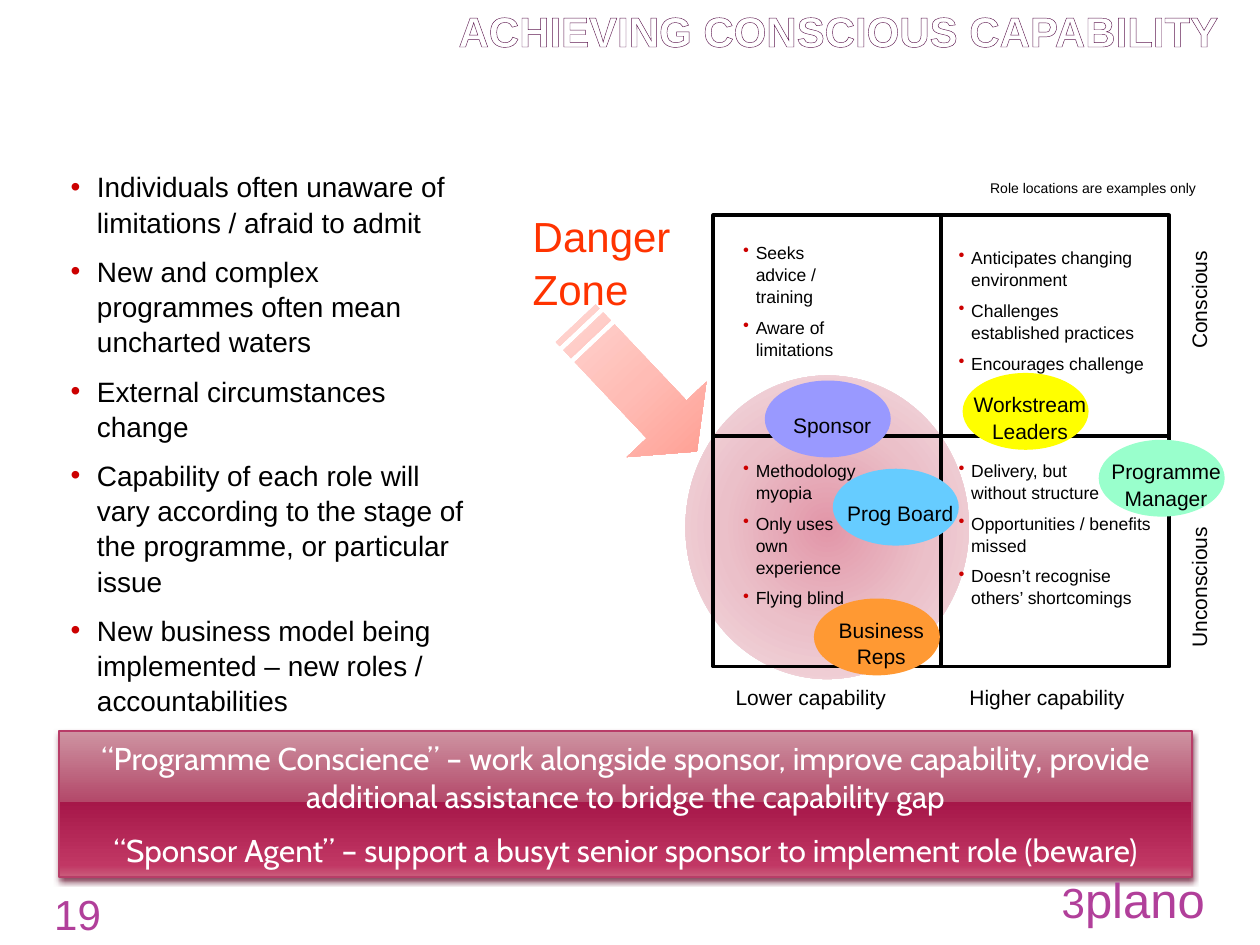
import pptx
import pptx.util
import pptx.dml.color
import pptx.enum.shapes
import pptx.enum.text
import pptx.oxml
import pptx.oxml.ns
from lxml import etree

Inches = pptx.util.Inches
Pt = pptx.util.Pt
RGBColor = pptx.dml.color.RGBColor
MSO_SHAPE = pptx.enum.shapes.MSO_SHAPE
PP_ALIGN = pptx.enum.text.PP_ALIGN
MSO_ANCHOR = pptx.enum.text.MSO_ANCHOR
qn = pptx.oxml.ns.qn
NS = pptx.oxml.ns.nsdecls("a")

BLACK = RGBColor(0x00, 0x00, 0x00)
WHITE = RGBColor(0xFF, 0xFF, 0xFF)
BULLET_RED = RGBColor(0xCC, 0x00, 0x00)
DANGER_RED = RGBColor(0xFF, 0x33, 0x00)
FOOTER_PINK = RGBColor(0xB1, 0x3F, 0x9A)
BANNER_LINE = RGBColor(0xB8, 0x3D, 0x68)
BANNER_SHADOW = RGBColor(0x72, 0x26, 0x40)
TITLE_OUTLINE = RGBColor(0x5E, 0x1A, 0x50)
LILAC = RGBColor(0x99, 0x99, 0xFF)
MINT = RGBColor(0x99, 0xFF, 0xCC)
YELLOW = RGBColor(0xFF, 0xFF, 0x00)
SKY = RGBColor(0x66, 0xCC, 0xFF)
ORANGE = RGBColor(0xFF, 0x99, 0x33)
ZONE_STOPS = [(0, RGBColor(0xE2, 0x96, 0xA8)), (50, RGBColor(0xEB, 0xC0, 0xC9)),
              (100, RGBColor(0xF5, 0xE0, 0xE5))]
BANNER_STOPS = [(0, RGBColor(0xCE, 0x94, 0xA2)), (49, RGBColor(0xB3, 0x48, 0x69)),
                (49, RGBColor(0xA6, 0x17, 0x49)), (92, RGBColor(0xC1, 0x37, 0x64)),
                (100, RGBColor(0xCA, 0x5D, 0x7C))]
ARROW_STOPS = [(0, RGBColor(0xFF, 0xDE, 0xDB)), (50, RGBColor(0xFF, 0xBC, 0xB5)),
               (100, RGBColor(0xFF, 0x92, 0x84))]
RADIAL = '<a:path path="circle"><a:fillToRect l="50000" t="50000" r="50000" b="50000"/></a:path>'


def add_run(p, text, size=12, color=BLACK, font="Arial", bold=False):
    r = p.add_run()
    r.text = text
    r.font.name, r.font.size, r.font.bold = font, Pt(size), bold
    r.font.color.rgb = color
    return r


def linear(angle):
    return f'<a:lin ang="{angle * 60000}" scaled="0"/>'


def set_gradient(sp, stops, direction):
    sp.fill.background()
    gs = "".join(f'<a:gs pos="{pos * 1000}"><a:srgbClr val="{c}"/></a:gs>' for pos, c in stops)
    grad = pptx.oxml.parse_xml(
        f'<a:gradFill {NS} rotWithShape="1"><a:gsLst>{gs}</a:gsLst>{direction}</a:gradFill>')
    no_fill = sp.element.spPr.find(qn("a:noFill"))
    sp.element.spPr.replace(no_fill, grad)


def set_bullet(p, indent):
    pPr = p._p.get_or_add_pPr()
    pPr.set("marL", str(Inches(indent)))
    pPr.set("indent", str(-Inches(indent)))
    color = etree.SubElement(pPr, qn("a:buClr"))
    etree.SubElement(color, qn("a:srgbClr"), val=str(BULLET_RED))
    etree.SubElement(pPr, qn("a:buChar"), char="•")


class SlideBuilder:
    line_spacing = 1.05
    grid_width = 2.25

    def __init__(self, slide):
        self.s = slide

    def place(self, sp, x, y, w, h):
        sp.left, sp.top, sp.width, sp.height = Inches(x), Inches(y), Inches(w), Inches(h)

    def set_text(self, tf, paragraphs, size=12, align=PP_ALIGN.LEFT, anchor=MSO_ANCHOR.MIDDLE,
                 bullet=None, wrap=True, spacing=line_spacing, **style):
        tf.auto_size = pptx.enum.text.MSO_AUTO_SIZE.NONE
        tf.word_wrap = wrap
        tf.vertical_anchor = anchor
        for i, text in enumerate(paragraphs):
            p = tf.add_paragraph() if i else tf.paragraphs[0]
            if bullet:
                set_bullet(p, bullet)
            p.alignment = align
            p.line_spacing = spacing
            p.space_before = Pt(size / 2 if i else 0)
            for j, line in enumerate(text.split("\n")):
                if j:
                    p.add_line_break()
                add_run(p, line, size, **style)

    def title(self, text, *box):
        sp = self.s.shapes.title
        self.place(sp, *box)
        tf = sp.text_frame
        tf.margin_left = tf.margin_right = Inches(0.05)
        tf.margin_top = tf.margin_bottom = 0
        self.set_text(tf, [text], 24, PP_ALIGN.RIGHT, MSO_ANCHOR.BOTTOM, spacing=1.0,
                      color=WHITE, bold=True)
        outline = pptx.oxml.parse_xml(
            f'<a:ln {NS} w="508"><a:solidFill><a:srgbClr val="{TITLE_OUTLINE}"/></a:solidFill></a:ln>')
        tf.paragraphs[0].runs[0].font._element.insert(0, outline)

    def body(self, items, *box):
        sp = self.s.placeholders[1]
        self.place(sp, *box)
        self.set_text(sp.text_frame, items, 16, bullet=0.21)

    def text(self, paragraphs, x, y, w, h, rotation=0, parent=None, **style):
        shapes = (parent or self.s).shapes
        sp = shapes.add_textbox(Inches(x), Inches(y), Inches(w), Inches(h))
        sp.rotation = rotation
        self.set_text(sp.text_frame, paragraphs, **style)
        return sp

    def footer(self, text, *box):
        sp = self.text([text], *box, size=24, align=PP_ALIGN.RIGHT, anchor=MSO_ANCHOR.BOTTOM,
                       color=FOOTER_PINK, spacing=1.0)
        sp.text_frame.margin_top = sp.text_frame.margin_bottom = 0
        return sp

    def shape(self, kind, x, y, w, h, fill=None, parent=None):
        shapes = (parent or self.s).shapes
        sp = shapes.add_shape(kind, Inches(x), Inches(y), Inches(w), Inches(h))
        sp.shadow.inherit = False
        sp.line.fill.background()
        if fill is None:
            sp.fill.background()
        else:
            sp.fill.solid()
            sp.fill.fore_color.rgb = fill
        return sp

    def line(self, x1, y1, x2, y2):
        cn = self.s.shapes.add_connector(pptx.enum.shapes.MSO_CONNECTOR.STRAIGHT,
                                         Inches(x1), Inches(y1), Inches(x2), Inches(y2))
        cn.line.color.rgb = BLACK
        cn.line.width = Pt(self.grid_width)
        etree.SubElement(cn._element.spPr, qn("a:effectLst"))
        return cn

    def grid(self, x, y, w, h, split):
        frame = self.shape(MSO_SHAPE.RECTANGLE, x, y, w, h)
        frame.line.color.rgb = BLACK
        frame.line.width = Pt(self.grid_width)
        divider = self.line(x + w / 2, y, x + w / 2, y + h)
        divider.begin_connect(frame, 0)
        divider.end_connect(frame, 2)
        self.line(x, split, x + w, split)

    def role(self, name, x, y, color, h):
        group = self.s.shapes.add_group_shape()
        self.shape(MSO_SHAPE.OVAL, x, y, 1, 0.61, color, group)
        self.text([name], x - 0.08, y + 0.35 - h / 2, 1.23, h, parent=group, align=PP_ALIGN.CENTER)

    def striped_arrow(self, x, y, w, h, rotation):
        near, far, neck = h / 4, h * 3 / 4, w * 3 / 4
        bars = [[(a * w, near), (b * w, near), (b * w, far), (a * w, far)]
                for a, b in ((0, 1 / 32), (1 / 16, 1 / 8))]
        head = [(w * 5 / 32, near), (neck, near), (neck, 0), (w, h / 2),
                (neck, h), (neck, far), (w * 5 / 32, far)]
        fb = self.s.shapes.build_freeform(0, 0, scale=Inches(1) / 1000)
        for outline in bars + [head]:
            points = [(round(px * 1000), round(py * 1000)) for px, py in outline]
            fb.move_to(*points[0])
            fb.add_line_segments(points[1:], close=True)
        sp = fb.convert_to_shape()
        self.place(sp, x, y, w, h)
        sp.rotation = rotation
        sp.shadow.inherit = False
        sp.line.fill.background()
        set_gradient(sp, ARROW_STOPS, linear(0))

    def banner(self, paragraphs, *box):
        sp = self.shape(MSO_SHAPE.RECTANGLE, *box)
        set_gradient(sp, BANNER_STOPS, linear(90))
        sp.line.color.rgb = BANNER_LINE
        sp.line.width = Pt(0.9)
        sp.element.spPr.find(qn("a:effectLst")).append(pptx.oxml.parse_xml(
            f'<a:outerShdw {NS} blurRad="{Pt(3.1)}" dist="{Pt(2)}" dir="5400000" rotWithShape="0">'
            f'<a:srgbClr val="{BANNER_SHADOW}"><a:alpha val="83000"/></a:srgbClr></a:outerShdw>'))
        self.set_text(sp.text_frame, paragraphs, 18, PP_ALIGN.CENTER, spacing=1.0,
                      color=WHITE, font="Cabin")


def main():
    prs = pptx.Presentation()
    prs.slide_width, prs.slide_height = Inches(10), Inches(7.5)
    b = SlideBuilder(prs.slides.add_slide(prs.slide_layouts[1]))
    zone = b.shape(MSO_SHAPE.OVAL, 5.44, 2.98, 2.25, 2.41)
    set_gradient(zone, ZONE_STOPS, RADIAL)
    b.title("ACHIEVING CONSCIOUS CAPABILITY", 0.35, -0.08, 9.37, 0.52)
    b.banner(["“Programme Conscience” – work alongside sponsor, improve capability, provide "
              "additional assistance to bridge the capability gap",
              "“Sponsor Agent” – support a busyt senior sponsor to implement role (beware)"],
             0.47, 5.8, 8.99, 1.16)
    b.body(["Individuals often unaware of limitations / afraid to admit",
            "New and complex programmes often mean uncharted waters",
            "External circumstances change",
            "Capability of each role will vary according to the stage of the programme, or particular issue",
            "New business model being implemented – new roles / accountabilities"],
           0.46, 1.31, 3.33, 4.41)
    b.grid(5.66, 1.71, 3.62, 3.58, 3.46)
    for label, x, y, w, rotation in [("Higher capability", 7.54, 5.38, 1.54, 0),
                                     ("Lower capability", 5.59, 5.38, 1.69, 0),
                                     ("Unconscious", 8.76, 4.51, 1.5, 270),
                                     ("Conscious", 8.76, 2.23, 1.5, 270)]:
        b.text([label], x, y, w, 0.3, rotation, align=PP_ALIGN.CENTER)
    for items, *box in [
            (["Anticipates changing environment", "Challenges established practices",
              "Encourages challenge"], 7.51, 1.91, 1.69, 1.1),
            (["Seeks advice / training", "Aware of limitations"], 5.8, 1.87, 1.08, 1.03),
            (["Methodology myopia", "Only uses own experience", "Flying blind"], 5.8, 3.6, 1.15, 1.27),
            (["Delivery, but\nwithout structure", "Opportunities / benefits missed",
              "Doesn’t recognise others’ shortcomings"], 7.51, 3.6, 1.79, 1.27)]:
        b.text(items, *box, size=10, bullet=0.1)
    b.text(["Danger Zone"], 4.13, 1.6, 1.44, 0.91, size=24, anchor=MSO_ANCHOR.TOP, color=DANGER_RED)
    b.striped_arrow(4.35, 2.64, 1.4, 0.87, 46.6)
    for name, x, y, color, h in [("Sponsor", 6.07, 3.02, LILAC, 0.3),
                                 ("Programme Manager", 8.72, 3.49, MINT, 0.5),
                                 ("Workstream Leaders", 7.64, 2.96, YELLOW, 0.5),
                                 ("Prog Board", 6.61, 3.72, SKY, 0.3),
                                 ("Business Reps", 6.46, 4.75, ORANGE, 0.5)]:
        b.role(name, x, y, color, h)
    b.footer("19", 0.26, 7.2, 0.64, 0.25)
    b.text(["Role locations are examples only"], 7.76, 1.37, 1.86, 0.24, size=8,
           anchor=MSO_ANCHOR.TOP, wrap=False)
    brand = b.footer("3", 7.99, 6.82, 1.67, 0.55)
    add_run(brand.text_frame.paragraphs[0], "plano", 28, FOOTER_PINK)
    prs.save("out.pptx")


if __name__ == "__main__":
    main()
